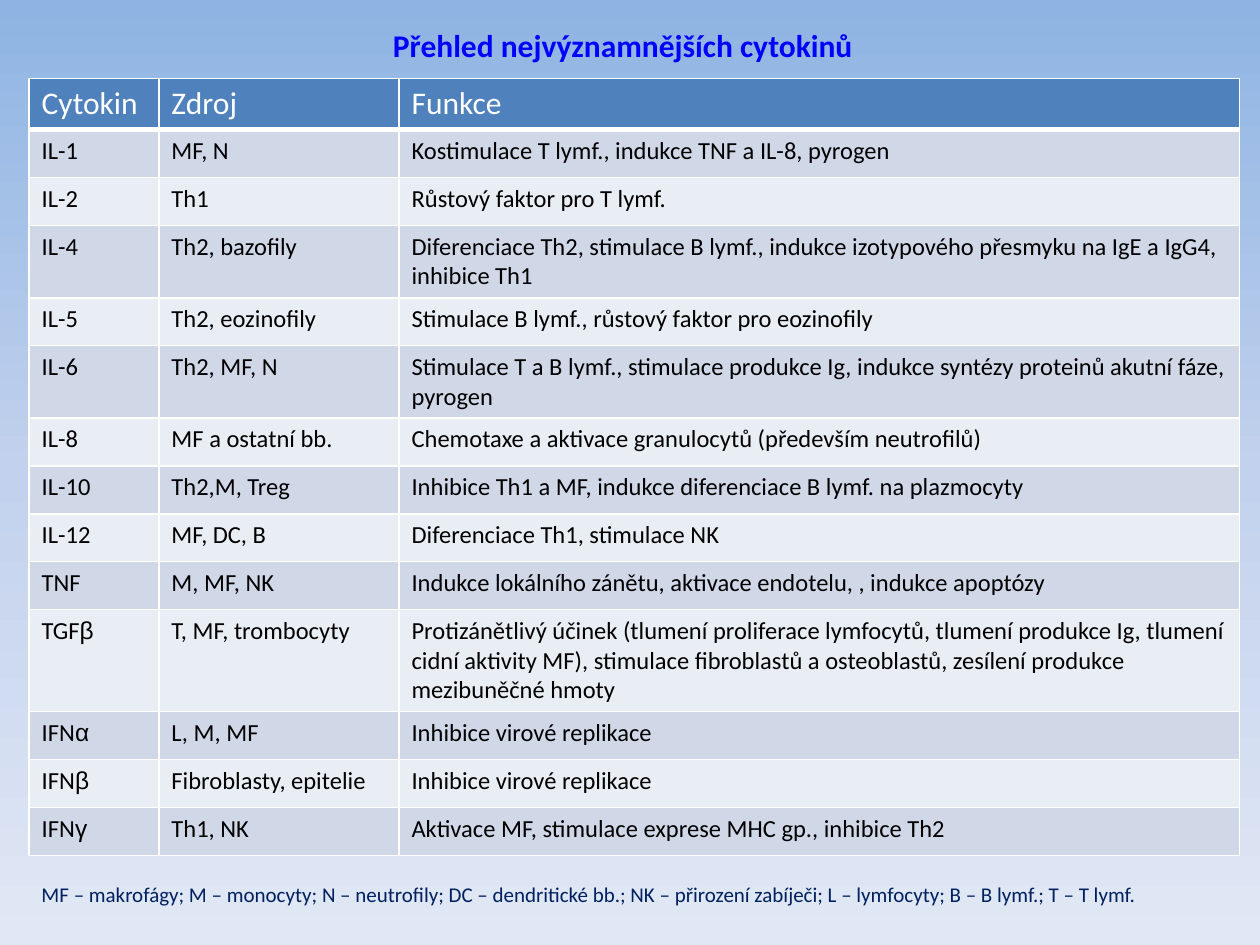
"""Build a one-slide overview table of the main cytokines."""
import copy

import pptx
import pptx.dml.color
import pptx.enum.text
import pptx.oxml
import pptx.oxml.ns
import pptx.util

Pt = pptx.util.Pt
qn = pptx.oxml.ns.qn

TITLE = "Přehled nejvýznamnějších cytokinů"
HEAD = ("Cytokin", "Zdroj", "Funkce")
ROWS = [
    ("IL-1", "MF, N", "Kostimulace T lymf., indukce TNF a IL-8, pyrogen"),
    ("IL-2", "Th1", "Růstový faktor pro T lymf."),
    ("IL-4", "Th2, bazofily", "Diferenciace Th2, stimulace B lymf., indukce "
     "izotypového přesmyku na IgE a IgG4, inhibice Th1"),
    ("IL-5", "Th2, eozinofily", "Stimulace B lymf., růstový faktor pro eozinofily"),
    ("IL-6", "Th2, MF, N", "Stimulace T a B lymf., stimulace produkce Ig, "
     "indukce syntézy proteinů akutní fáze, pyrogen"),
    ("IL-8", "MF a ostatní bb.",
     "Chemotaxe a aktivace granulocytů (především neutrofilů)"),
    ("IL-10", "Th2,M, Treg",
     "Inhibice Th1 a MF, indukce diferenciace B lymf. na plazmocyty"),
    ("IL-12", "MF, DC, B", "Diferenciace Th1, stimulace NK"),
    ("TNF", "M, MF, NK",
     "Indukce lokálního zánětu, aktivace endotelu, , indukce apoptózy"),
    ("TGFβ", "T, MF, trombocyty", "Protizánětlivý účinek (tlumení proliferace "
     "lymfocytů, tlumení produkce Ig, tlumení cidní aktivity MF), stimulace "
     "fibroblastů a osteoblastů, zesílení produkce mezibuněčné hmoty"),
    ("IFNα", "L, M, MF", "Inhibice virové replikace"),
    ("IFNβ", "Fibroblasty, epitelie", "Inhibice virové replikace"),
    ("IFNγ", "Th1, NK", "Aktivace MF, stimulace exprese MHC gp., inhibice Th2"),
]
NOTE = ("MF – makrofágy; M – monocyty; N – neutrofily; DC – dendritické bb.; "
        "NK – přirození zabíječi; L – lymfocyty; B – B lymf.; T – T lymf.")
GREEK = "αβγ"
SKY = ("8EB4E3", "C2D1ED", "E1E8F5")
BANDS = ("D0D8E8", "E9EDF4")
WIDTHS = (74.2, 137.2, 480.4)
ROW = 27.4


def color(code):
    return pptx.dml.color.RGBColor.from_string(code)


def style(par, size, code, bold=False):
    for run in par.runs:
        font = run.font
        font.size, font.bold = Pt(size), bold
        font.name = "Arial" if run.text in GREEK else "Calibri"
        font.color.rgb = color(code)


def border(cell, top, bottom):
    props = cell._tc.get_or_add_tcPr()
    for side, width in zip("LRTB", (1, 1, top, bottom)):
        props.append(pptx.oxml.parse_xml(
            f'<a:ln{side} {pptx.oxml.ns.nsdecls("a")} w="{Pt(width)}"><a:solidFill>'
            f'<a:srgbClr val="FFFFFF"/></a:solidFill></a:ln{side}>'))


def write(cell, text, size, code):
    par = cell.text_frame.paragraphs[0]
    stem = text.rstrip(GREEK)
    par.text = stem
    if stem != text:
        par.add_run().text = text[len(stem):]
    style(par, size, code)


def sky(slide):
    fill = slide.background.fill
    fill.gradient()
    fill.gradient_angle = 270
    stops = slide.element.find(".//" + qn("a:gsLst"))
    stops.insert(1, copy.deepcopy(stops[0]))
    for i, (stop, code) in enumerate(zip(fill.gradient_stops, SKY)):
        stop.position = i / 2
        stop.color.rgb = color(code)


def title(slide):
    shape = slide.shapes.title
    shape.left, shape.top, shape.width, shape.height = map(Pt, (22.3, 11.5, 667.4, 28.8))
    frame = shape.text_frame
    frame.text = TITLE
    frame.vertical_anchor = pptx.enum.text.MSO_ANCHOR.MIDDLE
    par = frame.paragraphs[0]
    par.alignment = pptx.enum.text.PP_ALIGN.CENTER
    style(par, 18, "0000FF", True)


def grid(slide):
    data = [HEAD] + ROWS
    table = slide.shapes.add_table(
        len(data), len(HEAD), Pt(16.6), Pt(44.9),
        Pt(sum(WIDTHS)), Pt(ROW * len(data))).table
    for col, width in zip(table.columns, WIDTHS):
        col.width = Pt(width)
    for r, line in enumerate(data):
        table.rows[r].height = Pt(ROW)
        for c, text in enumerate(line):
            cell = table.cell(r, c)
            border(cell, 3 if r == 1 else 1, 3 if r == 0 else 1)
            cell.fill.solid()
            cell.fill.fore_color.rgb = color(BANDS[(r - 1) % 2] if r else "4F81BD")
            write(cell, text, 14 if r else 18, "000000" if r else "FFFFFF")


def note(slide):
    frame = slide.shapes.add_textbox(*map(Pt, (16.6, 500.4, 647.3, 21.6))).text_frame
    frame.text = NOTE
    frame.word_wrap = False
    frame.auto_size = pptx.enum.text.MSO_AUTO_SIZE.SHAPE_TO_FIT_TEXT
    style(frame.paragraphs[0], 12, "002060")


def main():
    deck = pptx.Presentation()
    deck.slide_width, deck.slide_height = Pt(720), Pt(540)
    slide = deck.slides.add_slide(deck.slide_layouts[5])
    sky(slide)
    title(slide)
    grid(slide)
    note(slide)
    deck.save("out.pptx")


if __name__ == "__main__":
    main()
